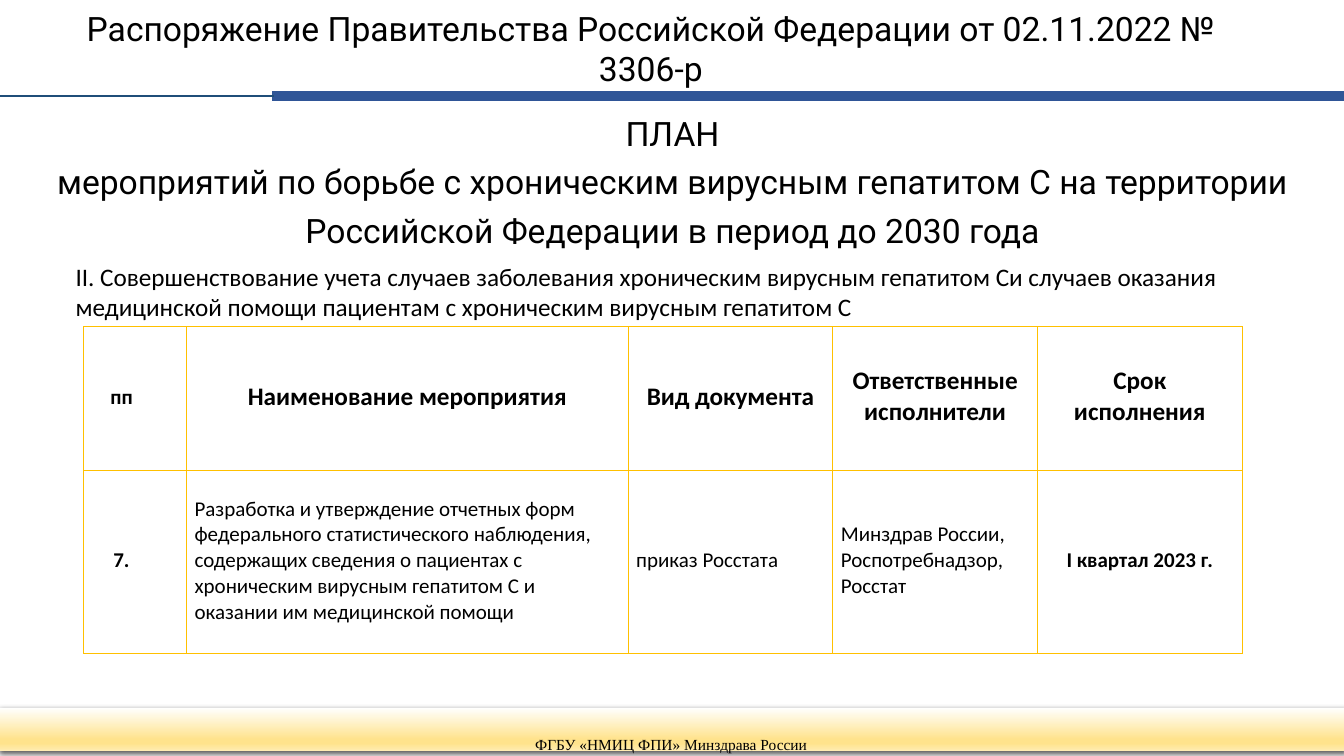
import pptx
import pptx.util
import pptx.oxml
import pptx.oxml.ns
import pptx.dml.color
import pptx.enum.shapes
import pptx.enum.text

RGBColor = pptx.dml.color.RGBColor
BLACK = RGBColor(0x00, 0x00, 0x00)
BLUE = RGBColor(0x2F, 0x55, 0x97)
NAVY = RGBColor(0x1F, 0x4E, 0x79)
GOLD = RGBColor(0xFF, 0xC0, 0x00)
WHITE = RGBColor(0xFF, 0xFF, 0xFF)
AMBER = RGBColor(0xFF, 0xE3, 0x8C)
CREAM = RGBColor(0xFF, 0xEC, 0xB2)
CENTER = pptx.enum.text.PP_ALIGN.CENTER
LEFT = pptx.enum.text.PP_ALIGN.LEFT
MIDDLE = pptx.enum.text.MSO_ANCHOR.MIDDLE
NS = pptx.oxml.ns.nsdecls("a")

deck = pptx.Presentation()
deck.slide_width = pptx.util.Inches(13.33)
deck.slide_height = pptx.util.Inches(7.5)
page = deck.slides.add_slide(deck.slide_layouts[6])


def share(left, top, width, height):
    """Turn percentages of the slide into lengths."""
    sides = (deck.slide_width, deck.slide_height) * 2
    return [int(side * part / 100) for side, part in zip(sides, (left, top, width, height))]


def write(frame, lines, font, size, align=LEFT, bold=False, spacing=None):
    frame.word_wrap = True
    for number, line in enumerate(lines):
        para = frame.paragraphs[0] if number == 0 else frame.add_paragraph()
        para.alignment = align
        if spacing:
            para.line_spacing = spacing
        span = para.add_run()
        span.text = line
        span.font.name = font
        span.font.size = pptx.util.Pt(size)
        span.font.bold = bold
        span.font.color.rgb = BLACK


# Footer band: gradient fill and soft shadow
band = page.shapes.add_shape(pptx.enum.shapes.MSO_SHAPE.RECTANGLE, *share(0, 93.6, 100, 5.73))
band.line.fill.background()
stops = "".join(
    f'<a:gs pos="{percent * 1000}"><a:srgbClr val="{color}"/></a:gs>'
    for percent, color in [(0, WHITE), (74, AMBER), (83, AMBER), (100, CREAM)])
band_properties = band.element.spPr
band_properties.find(pptx.oxml.ns.qn("a:prstGeom")).addnext(pptx.oxml.parse_xml(
    f'<a:gradFill {NS} rotWithShape="1"><a:gsLst>{stops}</a:gsLst>'
    '<a:lin ang="5400000" scaled="0"/></a:gradFill>'))
band_properties.append(pptx.oxml.parse_xml(
    f'<a:effectLst {NS}><a:outerShdw blurRad="57150" dist="19050" dir="5400000" algn="ctr"'
    f' rotWithShape="0"><a:srgbClr val="{BLACK}"><a:alpha val="63000"/></a:srgbClr>'
    '</a:outerShdw></a:effectLst>'))

# Rule under the title: thick on the right, thin on the left
for start, end, color, weight in [(20.26, 100, BLUE, 7), (0, 20.41, NAVY, 1.5)]:
    rule = page.shapes.add_connector(
        pptx.enum.shapes.MSO_CONNECTOR.STRAIGHT, *share(start, 12.67, end, 12.67))
    rule.line.color.rgb = color
    rule.line.width = pptx.util.Pt(weight)
    rule.element.spPr.append(pptx.oxml.parse_xml(f"<a:effectLst {NS}/>"))

# Footer, title, plan heading and section heading
texts = [
    ((39.08, 96.53, 21.91, 3.87), ["ФГБУ «НМИЦ ФПИ» Минздрава России"],
     "Times New Roman", 11, LEFT, None),
    ((3.75, 1.87, 89.35, 9.07),
     ["Распоряжение Правительства Российской Федерации от 02.11.2022 № 3306-р"],
     "Roboto", 24, CENTER, None),
    ((3.23, 13.2, 93.62, 20.13),
     ["ПЛАН",
      "мероприятий по борьбе с хроническим вирусным гепатитом С на территории "
      "Российской Федерации в период до 2030 года"],
     "Roboto", 24, CENTER, 1.2),
    ((4.88, 33.87, 91.3, 9.47),
     ["II. Совершенствование учета случаев заболевания хроническим вирусным гепатитом "
      "Си случаев оказания медицинской помощи пациентам с хроническим вирусным гепатитом С"],
     "Calibri", 18, LEFT, None),
]
for area, lines, font, size, align, spacing in texts:
    box = page.shapes.add_textbox(*share(*area))
    write(box.text_frame, lines, font, size, align, spacing=spacing)
    if size == 24 and spacing is None:
        box.text_frame.vertical_anchor = MIDDLE

# Table of measures
header = [["пп"], ["Наименование мероприятия"], ["Вид документа"],
          ["Ответственные исполнители"], ["Срок исполнения"]]
measure = [["7."],
           ["Разработка и утверждение отчетных форм федерального статистического наблюдения, "
            "содержащих сведения о пациентах с хроническим вирусным гепатитом С и "
            "оказании им медицинской помощи"],
           ["приказ Росстата"],
           ["Минздрав России, Роспотребнадзор,", "Росстат"],
           ["I квартал 2023 г."]]
column_shares = [7.65, 32.86, 15.23, 15.23, 15.23]
row_shares = [19.07, 24.13]
table = page.shapes.add_table(
    2, 5, *share(6.23, 43.2, sum(column_shares), sum(row_shares))).table
table.first_row = table.horz_banding = False
for column, part in zip(table.columns, column_shares):
    column.width = int(deck.slide_width * part / 100)
for row, part in zip(table.rows, row_shares):
    row.height = int(deck.slide_height * part / 100)

for row_number, row_texts in enumerate([header, measure]):
    for column_number, lines in enumerate(row_texts):
        cell = table.cell(row_number, column_number)
        is_number = column_number == 0
        is_heading = row_number == 0 and not is_number
        is_bold = is_heading or column_number in (0, 4)
        cell.vertical_anchor = MIDDLE
        margins = (0.1, 0.26, 0.1, 0.3) if is_heading else (
            0.08, 0.22, 0.35 if is_number else 0.08, 0.25)
        (cell.margin_left, cell.margin_top, cell.margin_right,
         cell.margin_bottom) = map(pptx.util.Inches, margins)
        write(cell.text_frame, lines, "Calibri", 18 if is_heading else 15,
              CENTER if is_bold else LEFT, is_bold)
        # Borders precede the fill in the cell properties
        cell_properties = cell._tc.get_or_add_tcPr()
        for side in ("lnL", "lnR", "lnT", "lnB"):
            cell_properties.append(pptx.oxml.parse_xml(
                f'<a:{side} {NS} w="12700"><a:solidFill><a:srgbClr val="{GOLD}"/>'
                f'</a:solidFill></a:{side}>'))
        cell.fill.background()

deck.save("out.pptx")
